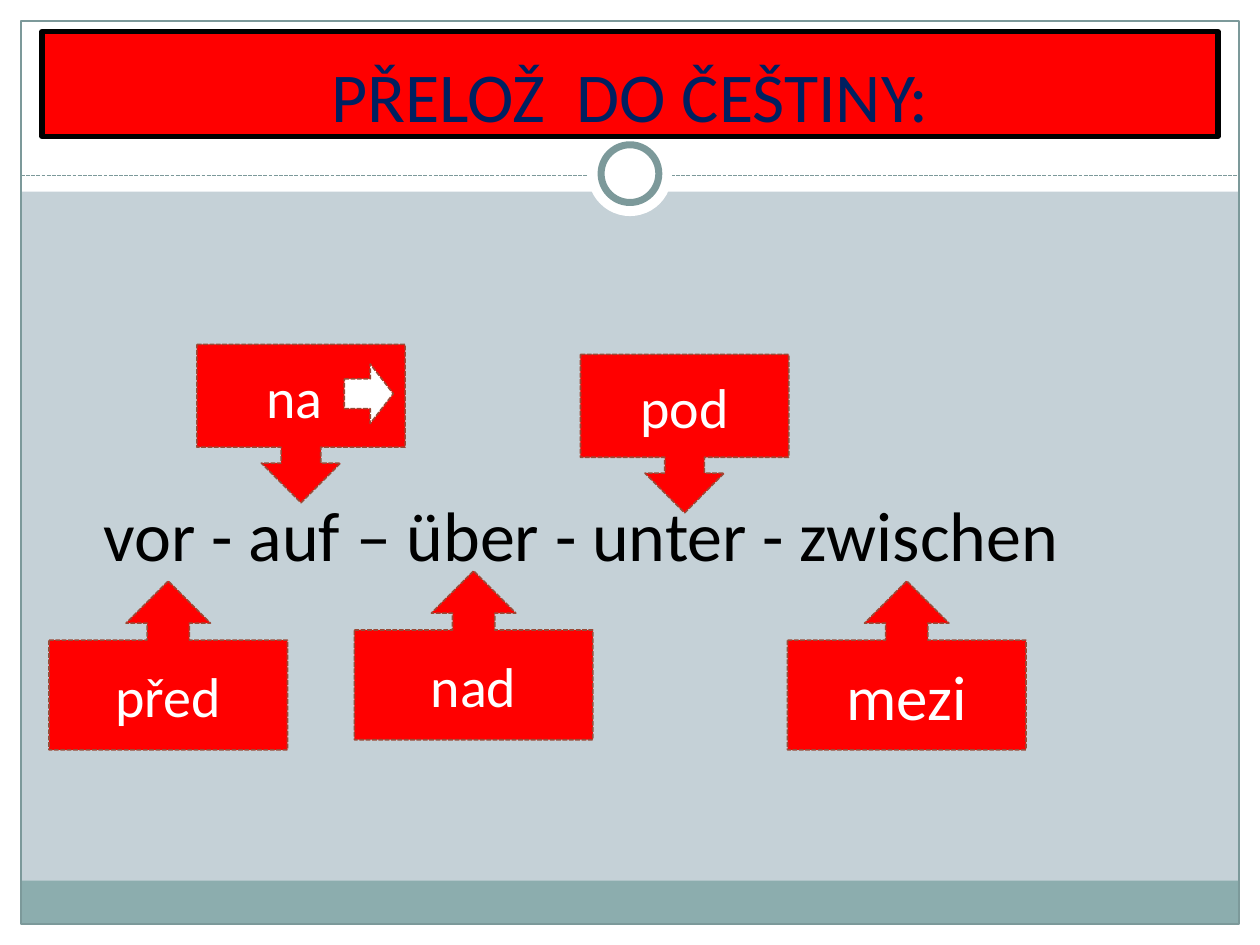
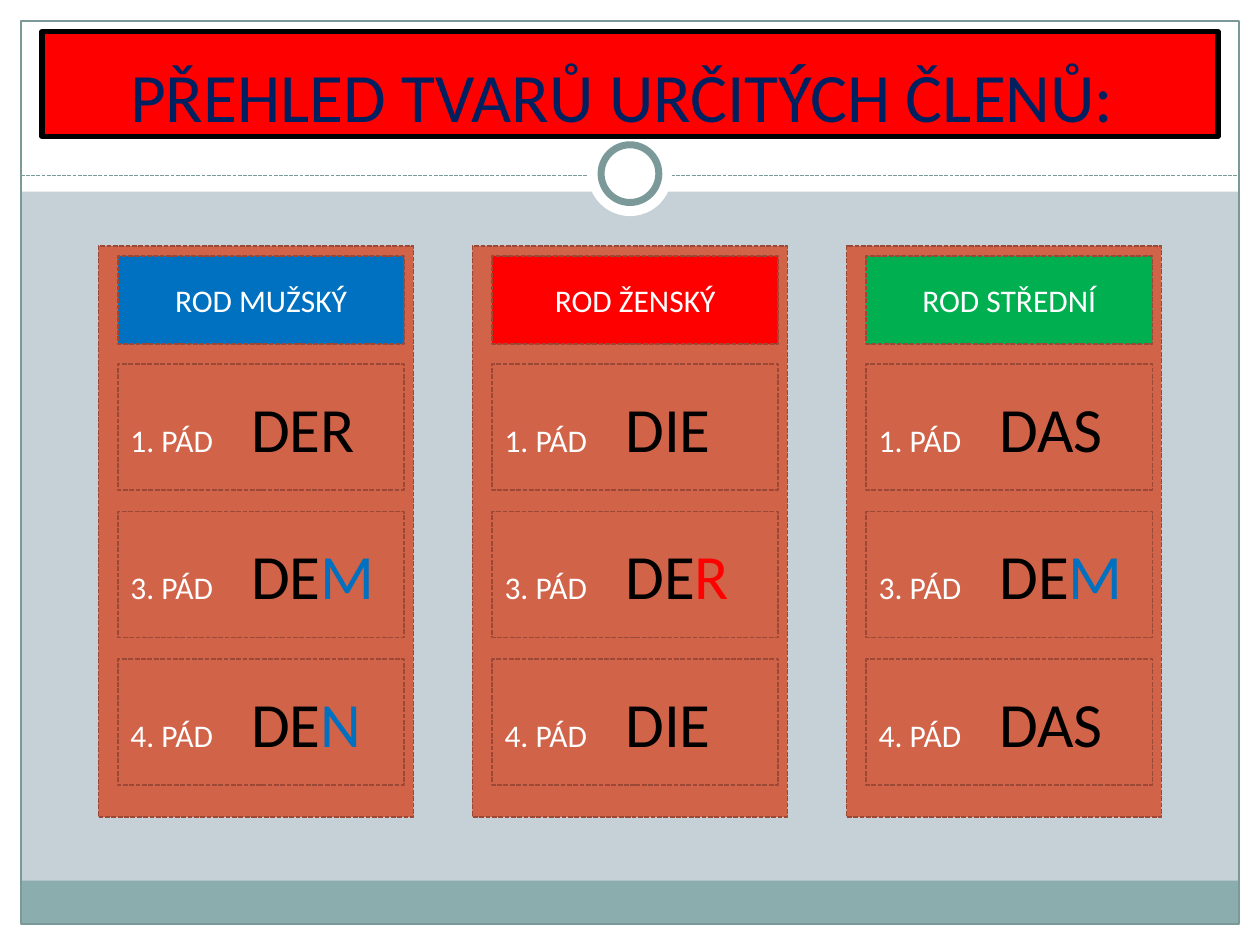
"""Two German grammar slides: prepositions and forms of the definite article."""
from lxml.etree import SubElement
from pptx import Presentation
from pptx.dml.color import RGBColor
from pptx.enum.dml import MSO_LINE
from pptx.enum.shapes import MSO_CONNECTOR, MSO_SHAPE
from pptx.enum.text import MSO_ANCHOR, MSO_AUTO_SIZE, PP_ALIGN
from pptx.oxml.ns import qn
from pptx.util import Pt

WHITE = RGBColor(0xFF, 0xFF, 0xFF)
BLACK = RGBColor(0x00, 0x00, 0x00)
RED = RGBColor(0xFF, 0x00, 0x00)
BLUE = RGBColor(0x00, 0x70, 0xC0)
GREEN = RGBColor(0x00, 0xB0, 0x50)
NAVY = RGBColor(0x00, 0x20, 0x60)
TEAL = RGBColor(0x8C, 0xAD, 0xAE)
DARK_TEAL = RGBColor(0x7C, 0x99, 0x9A)
PALE_BLUE = RGBColor(0xC5, 0xD1, 0xD7)
BRICK = RGBColor(0xD1, 0x63, 0x49)
DARK_BRICK = RGBColor(0x9B, 0x49, 0x36)
FONT = "Calibri"
TITLE_ONLY, TITLE_AND_BODY = 5, 1


class Deck:
    def __init__(self):
        self.presentation = Presentation()
        self.presentation.slide_width = Pt(720)
        self.presentation.slide_height = Pt(540)
        self.slide = None

    def new_slide(self, layout):
        layouts = self.presentation.slide_layouts
        self.slide = self.presentation.slides.add_slide(layouts[layout])

    def place(self, shape, box):
        shape.left, shape.top, shape.width, shape.height = map(Pt, box)

    def style_font(self, font, size, color):
        font.name, font.size, font.color.rgb = FONT, Pt(size), color

    def set_text(self, shape, text, size, color):
        paragraph = shape.text_frame.paragraphs[0]
        paragraph.text = text
        paragraph.alignment = PP_ALIGN.CENTER
        self.style_font(paragraph.font, size, color)
        return paragraph

    def shape(self, kind, box, fill=None, line=None, width=0.75, dash=None):
        shape = self.slide.shapes.add_shape(kind, *map(Pt, box))
        shape.shadow.inherit = False
        if fill is None:
            shape.fill.background()
        else:
            shape.fill.solid()
            shape.fill.fore_color.rgb = fill
        if line is None:
            shape.line.fill.background()
        else:
            shape.line.color.rgb = line
            shape.line.width = Pt(width)
            shape.line.dash_style = dash
        return shape

    def dashed_shape(self, kind, box, fill):
        return self.shape(kind, box, fill, DARK_BRICK, 0.9, MSO_LINE.SQUARE_DOT)

    def labelled_shape(self, kind, box, fill, text, size):
        self.set_text(self.dashed_shape(kind, box, fill), text, size, WHITE)

    def dashed_line(self, left, right, top):
        line = self.slide.shapes.add_connector(
            MSO_CONNECTOR.STRAIGHT, Pt(left), Pt(top), Pt(right), Pt(top))
        line.line.color.rgb = DARK_TEAL
        line.line.width = Pt(0.75)
        line.line.dash_style = MSO_LINE.SQUARE_DOT
        SubElement(line._element.spPr, qn("a:effectLst"))

    def title(self, text, size):
        title = self.slide.shapes.title
        self.place(title, (24, 18, 672, 60))
        title.fill.solid()
        title.fill.fore_color.rgb = RED
        title.line.color.rgb = BLACK
        title.line.width = Pt(3)
        frame = title.text_frame
        frame.vertical_anchor = MSO_ANCHOR.BOTTOM
        frame.auto_size = MSO_AUTO_SIZE.NONE
        frame.margin_bottom = 0
        self.set_text(title, text, size, NAVY)

    def body(self, text, box, margin_top):
        body = self.slide.placeholders[1]
        self.place(body, box)
        body.text_frame.auto_size = MSO_AUTO_SIZE.NONE
        body.text_frame.margin_top = Pt(margin_top)
        paragraph = self.set_text(body, text, 40, BLACK)
        paragraph.space_before = 0
        properties = paragraph._p.get_or_add_pPr()
        properties.set("marL", "0")
        properties.set("indent", "0")
        properties.find(qn("a:defRPr")).addprevious(SubElement(properties, qn("a:buNone")))

    def case_cell(self, box, case, stem, ending, ending_color):
        cell = self.dashed_shape(MSO_SHAPE.RECTANGLE, box, BRICK)
        paragraph = cell.text_frame.paragraphs[0]
        paragraph.alignment = PP_ALIGN.JUSTIFY
        tabs = SubElement(paragraph._p.get_or_add_pPr(), qn("a:tabLst"))
        SubElement(tabs, qn("a:tab"), pos=str(Pt(69)), algn="l")
        parts = [(case + "\t", 18, WHITE), (stem, 36, BLACK), (ending, 36, ending_color)]
        for text, size, color in parts:
            if text:
                run = paragraph.add_run()
                run.text = text
                self.style_font(run.font, size, color)

    def master_frame(self):
        master = self.presentation.slide_master
        master.background.fill.solid()
        master.background.fill.fore_color.rgb = PALE_BLUE
        bands = [
            ((0, 528, 720, 12), WHITE),
            ((0, 0, 720, 109.5), WHITE),
            ((0, 0, 12, 540), WHITE),
            ((708, 0, 12, 540), WHITE),
            ((11.75, 503.25, 696, 24.75), TEAL),
        ]
        for box, fill in bands:
            self.shape(MSO_SHAPE.RECTANGLE, box, fill)
        self.shape(MSO_SHAPE.RECTANGLE, (12, 12, 696, 516), None, DARK_TEAL)
        self.dashed_line(12, 708, 100.5)
        self.shape(MSO_SHAPE.OVAL, (336, 75.5, 48, 48), WHITE)
        self.shape(MSO_SHAPE.OVAL, (343.5, 82.75, 33, 33), WHITE, DARK_TEAL, 4)
        parts = [shape for shape in self.slide.shapes if not shape.is_placeholder]
        for index, part in enumerate(parts):
            part._element._nvXxPr.cNvPr.id = 100 + index
            master.shapes._spTree.insert(2 + index, part._element)


def build_prepositions(deck):
    deck.title("PŘELOŽ  DO ČEŠTINY:", 40)
    deck.body("vor - auf – über - unter - zwischen", (0, 126, 664, 402), 155)
    up, down = MSO_SHAPE.UP_ARROW_CALLOUT, MSO_SHAPE.DOWN_ARROW_CALLOUT
    callouts = [
        (up, 28, 332, "před", 32),
        (up, 202.5, 326.25, "nad", 32),
        (up, 450, 332, "mezi", 36),
        (down, 112.5, 196.75, "na ", 32),
        (down, 331.75, 202.5, "pod", 32),
    ]
    sizes = {up: (136.25, 96.5), down: (119, 90.5)}
    for kind, left, top, text, size in callouts:
        deck.labelled_shape(kind, (left, top, *sizes[kind]), RED, text, size)
    arrow = deck.dashed_shape(MSO_SHAPE.RIGHT_ARROW, (196.75, 208, 28, 34), WHITE)
    arrow.adjustments[1] = 0.47


def build_articles(deck):
    deck.title("PŘEHLED TVARŮ URČITÝCH ČLENŮ: ", 39.6)
    cases = ("1. PÁD", "3. PÁD", "4. PÁD")
    genders = [
        ("ROD MUŽSKÝ", BLUE, BLUE, [("DER", ""), ("DE", "M"), ("DE", "N")]),
        ("ROD ŽENSKÝ", RED, RED, [("DIE", ""), ("DE", "R"), ("DIE", "")]),
        ("ROD STŘEDNÍ", GREEN, BLUE, [("DAS", ""), ("DE", "M"), ("DAS", "")]),
    ]
    for column, (gender, fill, ending_color, articles) in enumerate(genders):
        left = 56.25 + 213.75 * column
        cell_left, cell_width = left + 11.25, 163.5
        deck.dashed_shape(MSO_SHAPE.RECTANGLE, (left, 140.5, 180, 326.25), BRICK)
        deck.labelled_shape(
            MSO_SHAPE.RECTANGLE, (cell_left, 146.25, cell_width, 50.5), fill, gender, 18)
        for row, (case, (stem, ending)) in enumerate(zip(cases, articles)):
            box = (cell_left, 208 + 84.35 * row, cell_width, 72)
            deck.case_cell(box, case, stem, ending, ending_color)


def main():
    deck = Deck()
    deck.new_slide(TITLE_AND_BODY)
    deck.master_frame()
    build_prepositions(deck)
    deck.new_slide(TITLE_ONLY)
    build_articles(deck)
    deck.presentation.save("out.pptx")


if __name__ == "__main__":
    main()
